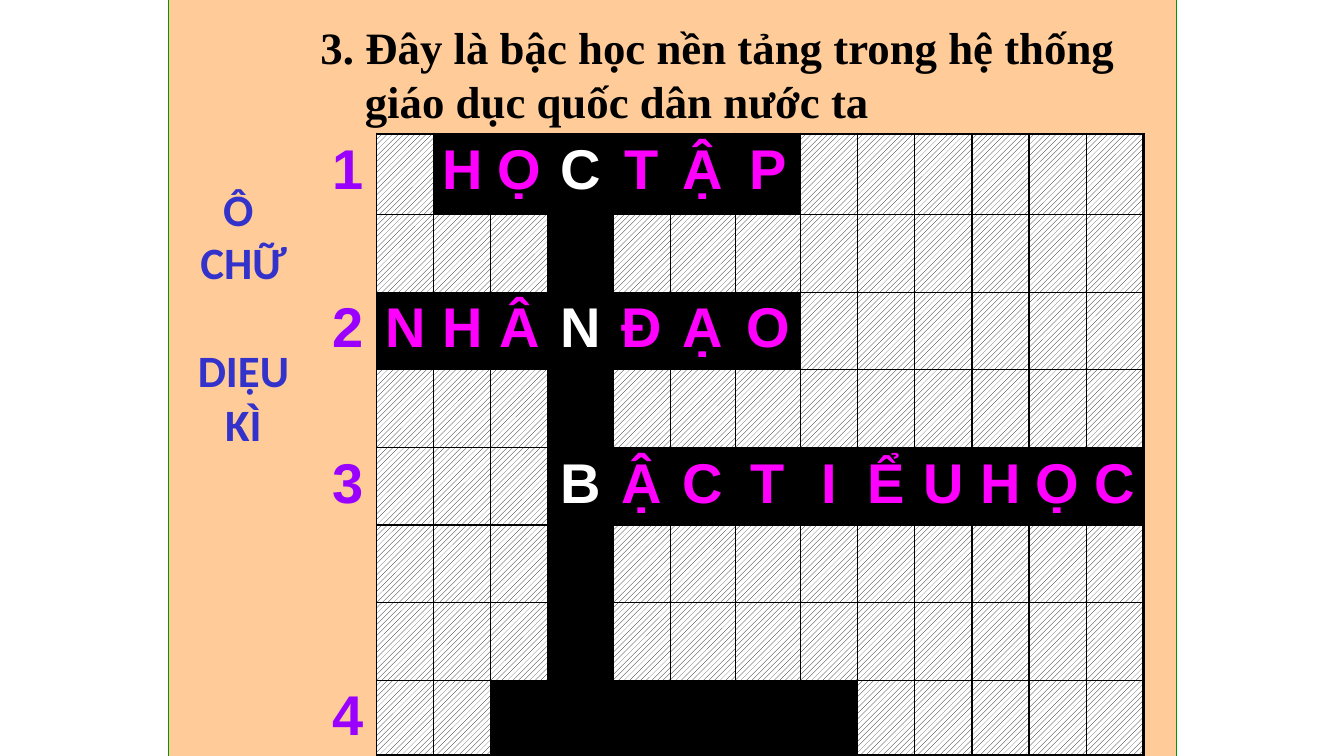
from lxml import etree
from pptx import Presentation
from pptx.dml.color import RGBColor
from pptx.enum.dml import MSO_PATTERN
from pptx.enum.shapes import MSO_SHAPE
from pptx.enum.text import PP_ALIGN
from pptx.oxml.ns import qn
from pptx.util import Inches, Pt

RECT = MSO_SHAPE.RECTANGLE
HATCH = MSO_PATTERN.WIDE_UPWARD_DIAGONAL
CENTER = PP_ALIGN.CENTER

BLACK = RGBColor(0x00, 0x00, 0x00)
WHITE = RGBColor(0xFF, 0xFF, 0xFF)
PEACH = RGBColor(0xFF, 0xCC, 0x99)
GREEN = RGBColor(0x00, 0x99, 0x00)
VIOLET = RGBColor(0x99, 0x00, 0xFF)
MAGENTA = RGBColor(0xFF, 0x00, 0xFF)
BLUE = RGBColor(0x33, 0x33, 0xCC)

THIN, THICK = 1, 2.25
KEY_COL = 4
COL_SHARES = [7, 7, 7, 7, 8, 7, 8, 8] + [7] * 6
ROW_HEIGHTS = [0.8] + [0.77] * 6 + [0.75]
# "." is a hatched cell, "#" a solved-later cell; the first item is the row number
ROWS = [
    ("1", ".HỌCTẬP......"),
    ("", "...#........."),
    ("2", "NHÂNĐẠO......"),
    ("", "...#........."),
    ("3", "...BẬCTIỂUHỌC"),
    ("", "...#........."),
    ("", "...#........."),
    ("4", "..######....."),
]


def set_font(p, name, size, color):
    """Give a paragraph its bold font."""
    p.font.name, p.font.size, p.font.bold = name, Pt(size), True
    p.font.color.rgb = color


def set_borders(cell, widths):
    """Draw left, right, top and bottom borders; a zero width hides one."""
    tcPr = cell._tc.get_or_add_tcPr()
    for i, (side, width) in enumerate(zip("LRTB", widths)):
        ln = etree.Element(qn(f"a:ln{side}"), w=str(int(Pt(width))))
        if width:
            fill = etree.SubElement(ln, qn("a:solidFill"))
            etree.SubElement(fill, qn("a:srgbClr"), val=str(BLACK))
        else:
            etree.SubElement(ln, qn("a:noFill"))
        tcPr.insert(i, ln)


def write_cell(cell, text, color):
    """Write one centred crossword character."""
    p = cell.text_frame.paragraphs[0]
    p.text, p.alignment = text, CENTER
    set_font(p, "Arial", 40, color)


def fill_square(cell, mark):
    """Fill a crossword square: hatched when blocked, otherwise black."""
    if mark == ".":
        cell.fill.patterned()
        cell.fill.pattern = HATCH
        cell.fill.fore_color.rgb = BLACK
        cell.fill.back_color.rgb = WHITE
    else:
        cell.fill.solid()
        cell.fill.fore_color.rgb = BLACK


def add_crossword(s, x, y, w, h):
    """Add the numbered crossword grid."""
    last_row, last_col = len(ROWS) - 1, len(COL_SHARES) - 1
    table = s.shapes.add_table(last_row + 1, last_col + 1, x, y, w, h).table
    for col, share in zip(table.columns, COL_SHARES):
        col.width = int(w * share / sum(COL_SHARES))
    for row, height in zip(table.rows, ROW_HEIGHTS):
        row.height = int(h * height / sum(ROW_HEIGHTS))
    for r, (number, marks) in enumerate(ROWS):
        label = table.cell(r, 0)
        label.fill.solid()
        label.fill.fore_color.rgb = PEACH
        set_borders(label, (0, THIN, 0, 0))
        if number:
            write_cell(label, number, VIOLET)
        for c, mark in enumerate(marks, 1):
            cell = table.cell(r, c)
            cell.margin_left = cell.margin_right = Inches(0.05)
            fill_square(cell, mark)
            set_borders(cell, (THIN, THICK if c == last_col else THIN,
                               THICK if r == 0 else THIN,
                               THICK if r == last_row else THIN))
            if mark not in ".#":
                write_cell(cell, mark, WHITE if c == KEY_COL else MAGENTA)


def add_panel(s, x, y, w, h):
    """Add the peach panel behind the puzzle."""
    sp = s.shapes.add_shape(RECT, x, y, w, h)
    sp.shadow.inherit = False
    sp.fill.solid()
    sp.fill.fore_color.rgb = PEACH
    sp.line.color.rgb = GREEN
    sp.line.width = Pt(0.75)


def add_question(s, x, y, w, h):
    """Add the question with a hanging indent."""
    tf = s.shapes.add_textbox(x, y, w, h).text_frame
    tf.word_wrap = True
    p = tf.paragraphs[0]
    p.text = "3. Đây là bậc học nền tảng trong hệ thống giáo dục quốc dân nước ta"
    set_font(p, "Times New Roman", 32, BLACK)
    indent = int(Inches(0.44))
    pPr = p._p.get_or_add_pPr()
    pPr.set("marL", str(indent))
    pPr.set("indent", str(-indent))


def add_side_title(s, x, y, w, h):
    """Add the stacked puzzle name."""
    tf = s.shapes.add_textbox(x, y, w, h).text_frame
    tf.word_wrap = False
    tf.text = "Ô \nCHỮ\n DIỆU\nKÌ"
    for p in tf.paragraphs:
        p.alignment = CENTER
        set_font(p, "Calibri", 32, BLUE)


def main():
    """Build and save the crossword slide."""
    prs = Presentation()
    prs.slide_width, prs.slide_height = Inches(13.33), Inches(7.5)
    s = prs.slides.add_slide(prs.slide_layouts[6])
    add_panel(s, *map(Inches, (1.67, -0.08, 10, 7.85)))
    add_crossword(s, *map(Inches, (3.17, 1.33, 8.17, 6.17)))
    add_question(s, *map(Inches, (3.08, 0.15, 8.58, 1.17)))
    add_side_title(s, *map(Inches, (1.83, 1.75, 1.17, 5.33)))
    prs.save("out.pptx")


if __name__ == "__main__":
    main()
